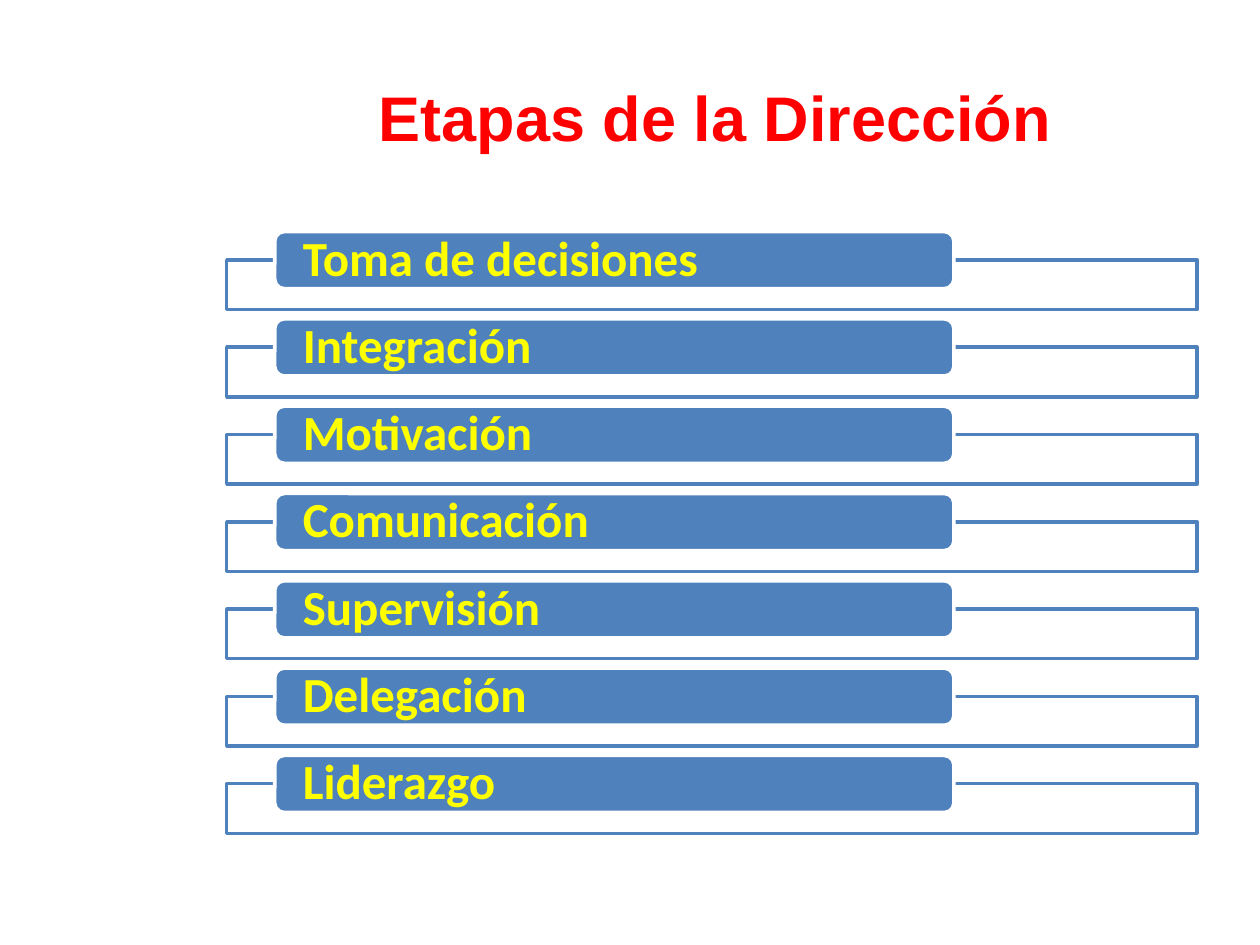
"""Builds the slide that lists the stages of management."""
from lxml.etree import SubElement
from pptx import Presentation
from pptx.dml.color import RGBColor
from pptx.enum.shapes import MSO_SHAPE as Shape
from pptx.enum.text import MSO_ANCHOR as Anchor, PP_ALIGN as Align
from pptx.oxml.ns import qn
from pptx.util import Cm, Pt

WHITE = RGBColor(0xFF, 0xFF, 0xFF)
BLUE = RGBColor(0x4F, 0x81, 0xBD)
YELLOW = RGBColor(0xFF, 0xFF, 0x00)
RED = RGBColor(0xFF, 0x00, 0x00)

STAGES = [
    "Toma de decisiones",
    "Integración",
    "Motivación",
    "Comunicación",
    "Supervisión",
    "Delegación",
    "Liderazgo",
]
FIRST_TOP = 4.67
PITCH = 1.76
PANEL_DROP = 0.57


def write_text(shape, text, font_name, size, color, alignment):
    frame = shape.text_frame
    frame.word_wrap = True
    frame.vertical_anchor = Anchor.MIDDLE
    paragraph = frame.paragraphs[0]
    paragraph.alignment = alignment
    run = paragraph.add_run()
    run.text = text
    run.font.name = font_name
    run.font.size = Pt(size)
    run.font.bold = True
    run.font.color.rgb = color
    return frame


def add_title(slide, text):
    box = slide.shapes.add_textbox(Cm(4.7), Cm(0.76), Cm(19.43), Cm(3.18))
    write_text(box, text, "Arial", 36, RED, Align.CENTER)


def add_box(slide, kind, left, top, width, height, fill, line):
    shape = slide.shapes.add_shape(kind, Cm(left), Cm(top), Cm(width), Cm(height))
    shape.shadow.inherit = False
    shape.fill.solid()
    shape.fill.fore_color.rgb = fill
    shape.line.color.rgb = line
    shape.line.width = Pt(2)
    return shape


def add_panel(slide, top):
    panel = add_box(slide, Shape.RECTANGLE, 4.57, top, 19.56, 1, WHITE, BLUE)
    color = panel.fill._xPr.find(qn("a:solidFill"))[0]
    SubElement(color, qn("a:alpha"), val="90000")


def add_label(slide, top, text):
    label = add_box(slide, Shape.ROUNDED_RECTANGLE, 5.54, top, 13.69, 1.15, BLUE, WHITE)
    frame = write_text(label, text, "Calibri", 28, YELLOW, Align.LEFT)
    frame.margin_left = frame.margin_right = Cm(0.51)
    frame.margin_top = frame.margin_bottom = 0
    frame.paragraphs[0].line_spacing = 0.9


def main():
    presentation = Presentation()
    presentation.slide_width = Cm(25.4)
    presentation.slide_height = Cm(19.05)
    slide = presentation.slides.add_slide(presentation.slide_layouts[6])
    add_title(slide, "Etapas de la Dirección")
    for index, stage in enumerate(STAGES):
        top = FIRST_TOP + index * PITCH
        add_panel(slide, top + PANEL_DROP)
        add_label(slide, top, stage)
    presentation.save("out.pptx")


if __name__ == "__main__":
    main()
